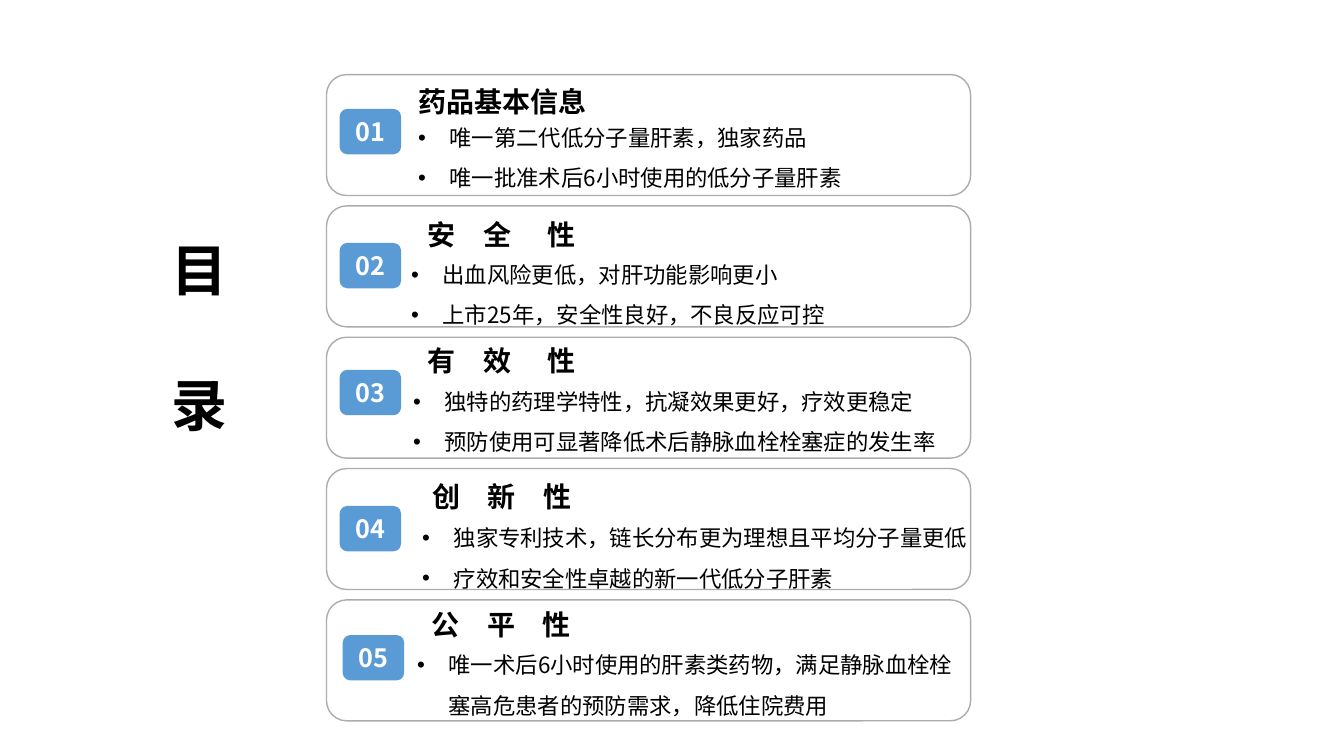
"""Build the contents slide: a side heading and five numbered section cards."""
from lxml import etree
from pptx import Presentation
from pptx import util as u
from pptx.dml.color import RGBColor
from pptx.enum import shapes, text
from pptx.oxml.ns import qn

THEME = dict(font="Noto Sans CJK SC", ink="000000", paper="FFFFFF", border="AFABAB",
             badge="5B9BD5", side=40, title=20, number=18, point=16)

SIDE = dict(letters="目\n录", box=(115.2, 164.9, 28.1, 152.6))
EVEN, WIDE_END = (7.5, 7.5, 1.5), (7.5, 10.5, 1.5)
SECTIONS = [
    dict(title="药品基本信息", gaps=None, title_box=(291.6, 56.9, 148.3, 31.7),
         badge=(242.6, 77.8), points_box=(291.6, 75.6, 413.3, 61.9),
         points="唯一第二代低分子量肝素，独家药品\n唯一批准术后6小时使用的低分子量肝素"),
    dict(title="安 全 性", gaps=WIDE_END, title_box=(283, 144.7, 150.5, 41),
         badge=(242.6, 173.5), points_box=(286.6, 173.5, 431.3, 91.4),
         points="出血风险更低，对肝功能影响更小\n上市25年，安全性良好，不良反应可控"),
    dict(title="有 效 性", gaps=WIDE_END, title_box=(284.4, 234.7, 147.6, 41),
         badge=(242.6, 264.2), points_box=(288, 264.2, 404.6, 61.9),
         points="独特的药理学特性，抗凝效果更好，疗效更稳定\n预防使用可显著降低术后静脉血栓栓塞症的发生率"),
    dict(title="创 新 性", gaps=EVEN, title_box=(254.9, 331.9, 207.4, 41),
         badge=(242.6, 361.4), points_box=(294.5, 361.4, 460.1, 91.4),
         points="独家专利技术，链长分布更为理想且平均分子量更低\n疗效和安全性卓越的新一代低分子肝素"),
    dict(title="公 平 性", gaps=EVEN, title_box=(254.2, 423.4, 207.4, 41),
         badge=(244.8, 453.6), points_box=(290.9, 452.2, 402.5, 61.9),
         points="唯一术后6小时使用的肝素类药物，满足静脉血栓栓塞高危患者的预防需求，降低住院费用"),
]
CARD_LEFT, CARD_TOP, CARD_STEP = 233.2, 53.3, 93.8
CARD_SIZE, BADGE_SIZE = (460.1, 86.4), (43.9, 32.4)
BULLET_INDENT = 22.5


def colour(name):
    return RGBColor.from_string(THEME[name])


def style(run, role, ink="ink", bold=True, spacing=None):
    run.font.size = u.Pt(THEME[role])
    run.font.name = THEME["font"]
    run.font.bold = bold
    run.font.color.rgb = colour(ink)
    props = run._r.get_or_add_rPr()
    etree.SubElement(props, qn("a:ea")).set("typeface", THEME["font"])
    if spacing is not None:
        props.set("spc", str(int(spacing * 100)))


def add_panel(slide, box, fill, border=None):
    panel = slide.shapes.add_shape(shapes.MSO_SHAPE.ROUNDED_RECTANGLE, *map(u.Pt, box))
    panel.shadow.inherit = False
    panel.fill.solid()
    panel.fill.fore_color.rgb = colour(fill)
    if border:
        panel.line.color.rgb = colour(border)
        panel.line.width = u.Pt(1)
    else:
        panel.line.fill.background()
    return panel


def add_words(slide, box, words, role, leading, bold=True):
    frame = slide.shapes.add_textbox(*map(u.Pt, box)).text_frame
    frame.word_wrap = True
    frame.text = words
    for paragraph in frame.paragraphs:
        paragraph.line_spacing = u.Pt(leading)
        for run in paragraph.runs:
            style(run, role, bold=bold)
    return frame


def add_spaced_title(slide, box, title, gaps):
    frame = add_words(slide, box, "", "title", 28.8)
    frame.vertical_anchor = text.MSO_ANCHOR.MIDDLE
    heading = frame.paragraphs[0]
    heading.alignment = text.PP_ALIGN.CENTER
    for start, gap in zip(range(0, len(title), 2), gaps):
        run = heading.add_run()
        run.text = title[start:start + 2]
        style(run, "title", spacing=gap)


def add_badge(slide, corner, number):
    badge = add_panel(slide, (*corner, *BADGE_SIZE), "badge")
    badge.text_frame.text = f"{number:02d}"
    badge.text_frame.vertical_anchor = text.MSO_ANCHOR.MIDDLE
    label = badge.text_frame.paragraphs[0]
    label.alignment = text.PP_ALIGN.CENTER
    style(label.runs[0], "number", "paper")


def add_points(slide, box, points):
    for point in add_words(slide, box, points, "point", 28.8, bold=False).paragraphs:
        props = point._p.get_or_add_pPr()
        props.set("marL", str(u.Pt(BULLET_INDENT)))
        props.set("indent", str(-u.Pt(BULLET_INDENT)))
        etree.SubElement(props, qn("a:buFont")).set("typeface", "Arial")
        etree.SubElement(props, qn("a:buChar")).set("char", "•")


def main():
    deck = Presentation()
    deck.slide_width, deck.slide_height = u.Pt(960), u.Pt(540)
    slide = deck.slides.add_slide(deck.slide_layouts[6])
    for index, section in enumerate(SECTIONS):
        card_top = CARD_TOP + index * CARD_STEP
        add_panel(slide, (CARD_LEFT, card_top, *CARD_SIZE), "paper", "border")
        add_badge(slide, section["badge"], index + 1)
        if section["gaps"]:
            add_spaced_title(slide, section["title_box"], section["title"], section["gaps"])
        else:
            add_words(slide, section["title_box"], section["title"], "title", 24)
        add_points(slide, section["points_box"], section["points"])
    side = add_words(slide, SIDE["box"], SIDE["letters"], "side", 48)
    side.paragraphs[1].space_before = u.Pt(48)
    deck.save("out.pptx")


if __name__ == "__main__":
    main()
